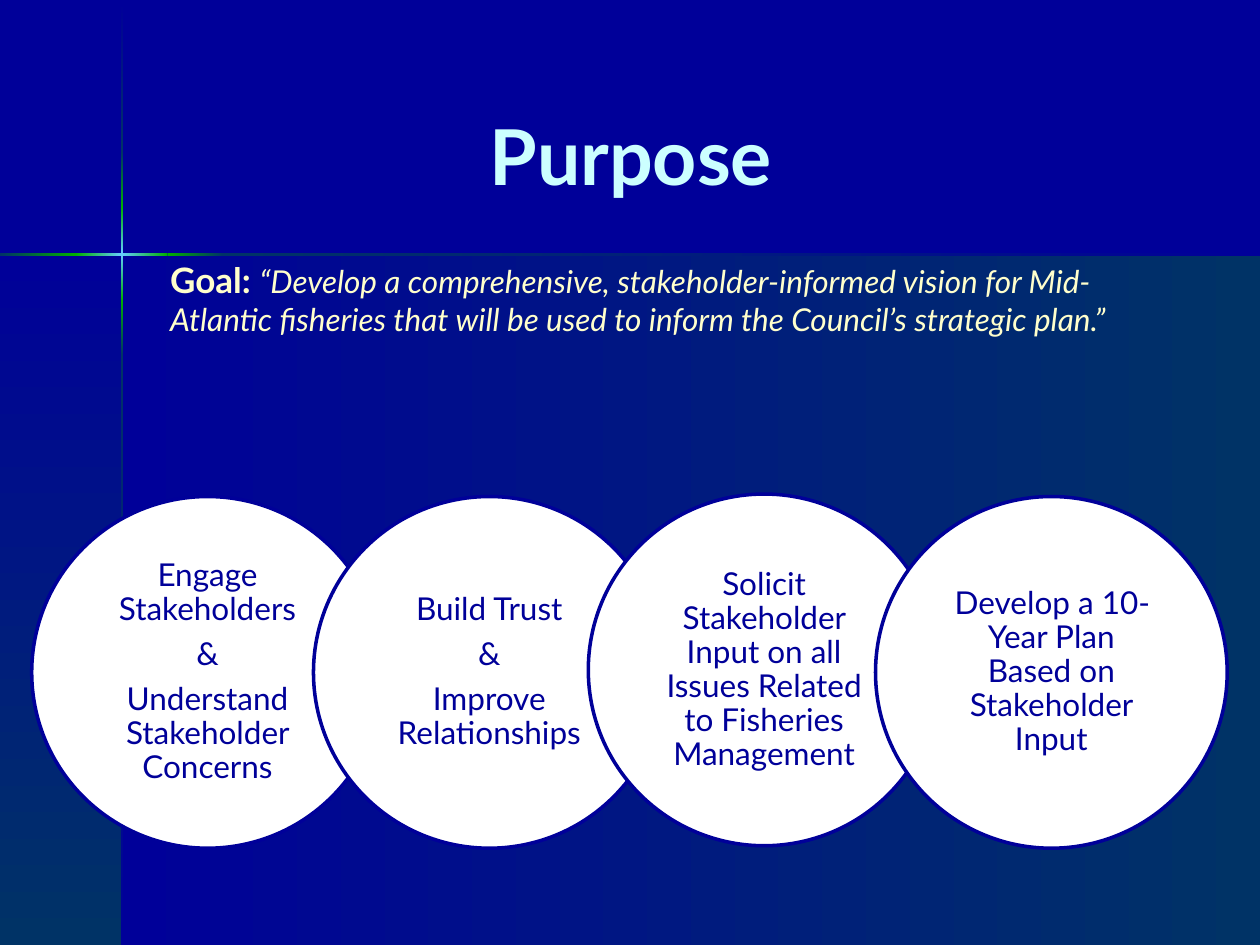
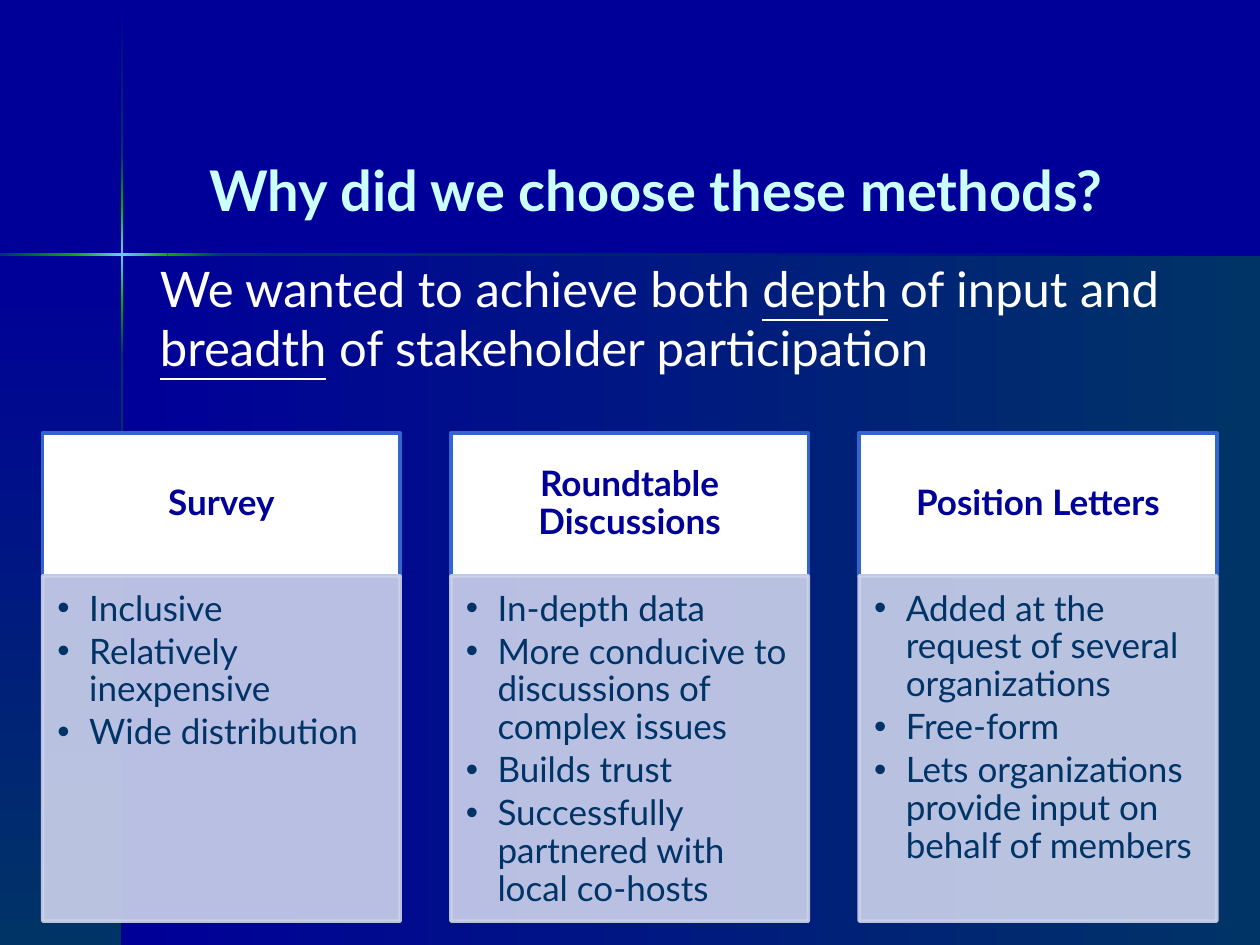
import pptx
import pptx.dml.color
import pptx.enum.shapes
import pptx.enum.text
import pptx.oxml.ns
import pptx.util
from lxml import etree

Cm = pptx.util.Cm
Pt = pptx.util.Pt
RGBColor = pptx.dml.color.RGBColor
SHAPE = pptx.enum.shapes.MSO_SHAPE
ALIGN = pptx.enum.text.PP_ALIGN
ANCHOR = pptx.enum.text.MSO_ANCHOR
qn = pptx.oxml.ns.qn

NAVY = RGBColor(0x00, 0x00, 0x99)
TEAL = RGBColor(0x00, 0x33, 0x66)
GREEN = RGBColor(0x00, 0xB0, 0x00)
SKY = RGBColor(0x66, 0xCC, 0xFF)
ICE = RGBColor(0xCC, 0xFF, 0xFF)
CREAM = RGBColor(0xFF, 0xFF, 0xCC)
WHITE = RGBColor(0xFF, 0xFF, 0xFF)
BORDER = RGBColor(0x33, 0x66, 0xCC)
LAVENDER = RGBColor(0xCE, 0xD3, 0xEC)

FONT = "Lato"
SLIDE_W, SLIDE_H = 25.4, 19.05
CROSS_X, CROSS_Y, CROSS_WEIGHT = 2.46, 5.13, 0.05
BEAM = [(NAVY, TEAL), (TEAL, GREEN), (GREEN, SKY, GREEN), (GREEN, TEAL), (TEAL, NAVY)]
BEAM_DOWN = [0.03, 3.07, 4.19, 6.05, 7.16, SLIDE_H]
BEAM_ACROSS = [0, 1.53, 3.38, 4.5, SLIDE_W]

GOALS = [
    (0.64, 10.01, ["Engage Stakeholders", "&", "Understand Stakeholder Concerns"]),
    (6.32, 10.01, ["Build Trust", "&", "Improve Relationships"]),
    (11.86, 9.96, ["Solicit Stakeholder Input on all Issues Related to Fisheries Management"]),
    (17.65, 10.01, ["Develop a 10-Year Plan Based on Stakeholder Input"]),
]
METHODS = [
    ("Survey", ["Inclusive", "Relatively inexpensive", "Wide distribution"]),
    ("Roundtable Discussions", [
        "In-depth data",
        "More conducive to discussions of complex issues",
        "Builds trust",
        "Successfully partnered with local co-hosts",
    ]),
    ("Position Letters", [
        "Added at the request of several organizations",
        "Free-form",
        "Lets organizations provide input on behalf of members",
    ]),
]


def apply(target, formats):
    """Set each attribute named in a dict of format values."""
    for name, value in formats.items():
        setattr(target, name, value)


def set_bullet(paragraph, char=None, indent=0):
    """Give a paragraph a hanging bullet, or none at all."""
    properties = paragraph._p.get_or_add_pPr()
    properties.set("marL", str(Cm(indent)))
    properties.set("indent", str(-Cm(indent)))
    if char:
        etree.SubElement(properties, qn("a:buFont"), typeface="Arial")
        etree.SubElement(properties, qn("a:buChar"), char=char)
    else:
        etree.SubElement(properties, qn("a:buNone"))


def write(frame, paragraphs, size, color, layout=None, bullet=None, indent=0, **font):
    """Fill a text frame with paragraphs, each a string or a list of (text, formats) runs."""
    apply(frame, {"word_wrap": True, "auto_size": pptx.enum.text.MSO_AUTO_SIZE.NONE})
    for index, content in enumerate(paragraphs):
        paragraph = frame.add_paragraph() if index else frame.paragraphs[0]
        set_bullet(paragraph, bullet, indent)
        apply(paragraph, {"space_before": Pt(0), **(layout or {})})
        for text, formats in [(content, {})] if isinstance(content, str) else content:
            run = paragraph.add_run()
            run.text = text
            apply(run.font, {"name": FONT, "size": Pt(size), **font, **formats})
            run.font.color.rgb = color


def place(shape, box):
    """Move a shape to a (left, top, width, height) box in centimetres."""
    apply(shape, dict(zip(("left", "top", "width", "height"), map(Cm, box))))


def set_insets(frame, left, top, right, bottom):
    """Set the inner margins of a text frame in centimetres."""
    apply(frame, {"margin_left": Cm(left), "margin_top": Cm(top),
                  "margin_right": Cm(right), "margin_bottom": Cm(bottom)})


def add_filled(slide, kind, box, fill, line, opacity=100):
    """Add a shape with a flat fill and outline."""
    shape = slide.shapes.add_shape(kind, *map(Cm, box))
    shape.shadow.inherit = False
    shape.line.width = Pt(2)
    for paint, color in ((shape.fill, fill), (shape.line.fill, line)):
        paint.solid()
        paint.fore_color.rgb = color
    if opacity < 100:
        for color in shape.element.spPr.iter(qn("a:srgbClr")):
            etree.SubElement(color, qn("a:alpha"), val=str(opacity * 1000))
    return shape


def add_gradient(slide, box, colors, down):
    """Add a borderless rectangle shaded evenly through the colours."""
    shape = slide.shapes.add_shape(SHAPE.RECTANGLE, *map(Cm, box))
    shape.shadow.inherit = False
    shape.line.fill.background()
    shape.fill.gradient()
    shape.fill.gradient_angle = 270 if down else 0
    stops = shape.element.spPr.find(".//" + qn("a:gsLst"))
    for stop in list(stops):
        stops.remove(stop)
    for index, color in enumerate(colors):
        position = 100000 * index // (len(colors) - 1)
        stop = etree.SubElement(stops, qn("a:gs"), pos=str(position))
        etree.SubElement(stop, qn("a:srgbClr"), val=str(color))
    return shape


def build_backdrop(master, slide):
    """Draw the panels and the glowing cross, then hand them to the master."""
    master.background.fill.solid()
    master.background.fill.fore_color.rgb = NAVY
    depth = SLIDE_H - CROSS_Y
    parts = [
        add_gradient(slide, (CROSS_X, CROSS_Y, SLIDE_W - CROSS_X, depth), (NAVY, TEAL), False),
        add_gradient(slide, (0, CROSS_Y, CROSS_X, depth), (NAVY, TEAL), True),
    ]
    half = CROSS_WEIGHT / 2
    for start, end, colors in zip(BEAM_DOWN, BEAM_DOWN[1:], BEAM):
        box = (CROSS_X - half, start, CROSS_WEIGHT, end - start)
        parts.append(add_gradient(slide, box, colors, True))
    for start, end, colors in zip(BEAM_ACROSS, BEAM_ACROSS[1:], BEAM[1:]):
        box = (start, CROSS_Y - half, end - start, CROSS_WEIGHT)
        parts.append(add_gradient(slide, box, colors, False))
    for index, part in enumerate(parts):
        master.shapes.element.insert(2 + index, part.element)


def build_title(slide, text, box, size):
    """Set the slide title in its placeholder."""
    title = slide.shapes.title
    place(title, box)
    title.text_frame.vertical_anchor = ANCHOR.MIDDLE
    write(title.text_frame, [text], size, ICE, {"alignment": ALIGN.CENTER}, bold=True)


def build_goal_circle(slide, box, lines):
    """Draw one circle with its centred lines."""
    circle = add_filled(slide, SHAPE.OVAL, box, WHITE, NAVY)
    frame = circle.text_frame
    frame.vertical_anchor = ANCHOR.MIDDLE
    set_insets(frame, 0.38, 0.08, 0.38, 0.08)
    layout = {"alignment": ALIGN.CENTER, "line_spacing": 0.9, "space_after": Pt(6.3)}
    write(frame, lines, 18, NAVY, layout)


def build_method_column(slide, box, method, reasons):
    """Draw one method heading above its panel of reasons."""
    left, top, width, height = box
    heading_height = 2.88
    heading = add_filled(slide, SHAPE.RECTANGLE, (left, top, width, heading_height), WHITE, BORDER)
    heading.text_frame.vertical_anchor = ANCHOR.MIDDLE
    set_insets(heading.text_frame, 0.4, 0.23, 0.4, 0.23)
    layout = {"alignment": ALIGN.CENTER, "line_spacing": 0.9, "space_after": Pt(7)}
    write(heading.text_frame, [method], 20, NAVY, layout, bold=True)

    panel_box = (left, top + heading_height, width, height - heading_height)
    panel = add_filled(slide, SHAPE.RECTANGLE, panel_box, LAVENDER, LAVENDER, opacity=90)
    panel.text_frame.vertical_anchor = ANCHOR.TOP
    set_insets(panel.text_frame, 0.3, 0.3, 0.4, 0.43)
    layout = {"alignment": ALIGN.LEFT, "line_spacing": 0.9, "space_after": Pt(3)}
    write(panel.text_frame, reasons, 20, TEAL, layout, bullet="•", indent=0.64)


def build_purpose(slide):
    """Compose the purpose slide."""
    build_title(slide, "Purpose", (2.24, 2.11, 20.96, 2.03), 44)
    diameter = 7.09
    for left, top, lines in GOALS:
        build_goal_circle(slide, (left, top, diameter, diameter), lines)
    goal = slide.shapes.add_textbox(*map(Cm, (3.18, 5.08, 19.48, 3.43)))
    quote = ("“Develop a comprehensive, stakeholder-informed vision for Mid-Atlantic fisheries "
             "that will be used to inform the Council’s strategic plan.”")
    runs = [("Goal: ", {"bold": True, "size": Pt(20)}), (quote, {"italic": True})]
    write(goal.text_frame, [runs], 18, CREAM)


def build_methods(slide):
    """Compose the slide that explains the methods."""
    build_title(slide, "Why did we choose these methods?", (2.34, 2.79, 21.79, 2.03), 32)
    aim = slide.placeholders[1]
    place(aim, (2.97, 5.08, 20.96, 3.61))
    underlined = {"underline": True}
    runs = [("We wanted to achieve both ", {}), ("depth", underlined), (" of input and ", {}),
            ("breadth", underlined), (" of stakeholder participation", {})]
    write(aim.text_frame, [runs], 28, WHITE)
    for index, (method, reasons) in enumerate(METHODS):
        build_method_column(slide, (0.86 + 8.23 * index, 8.73, 7.21, 9.84), method, reasons)


def main():
    """Build both slides and save them."""
    deck = pptx.Presentation()
    apply(deck, {"slide_width": Cm(SLIDE_W), "slide_height": Cm(SLIDE_H)})
    purpose = deck.slides.add_slide(deck.slide_layouts[5])
    build_backdrop(deck.slide_master, purpose)
    build_purpose(purpose)
    build_methods(deck.slides.add_slide(deck.slide_layouts[1]))
    deck.save("out.pptx")


if __name__ == "__main__":
    main()
